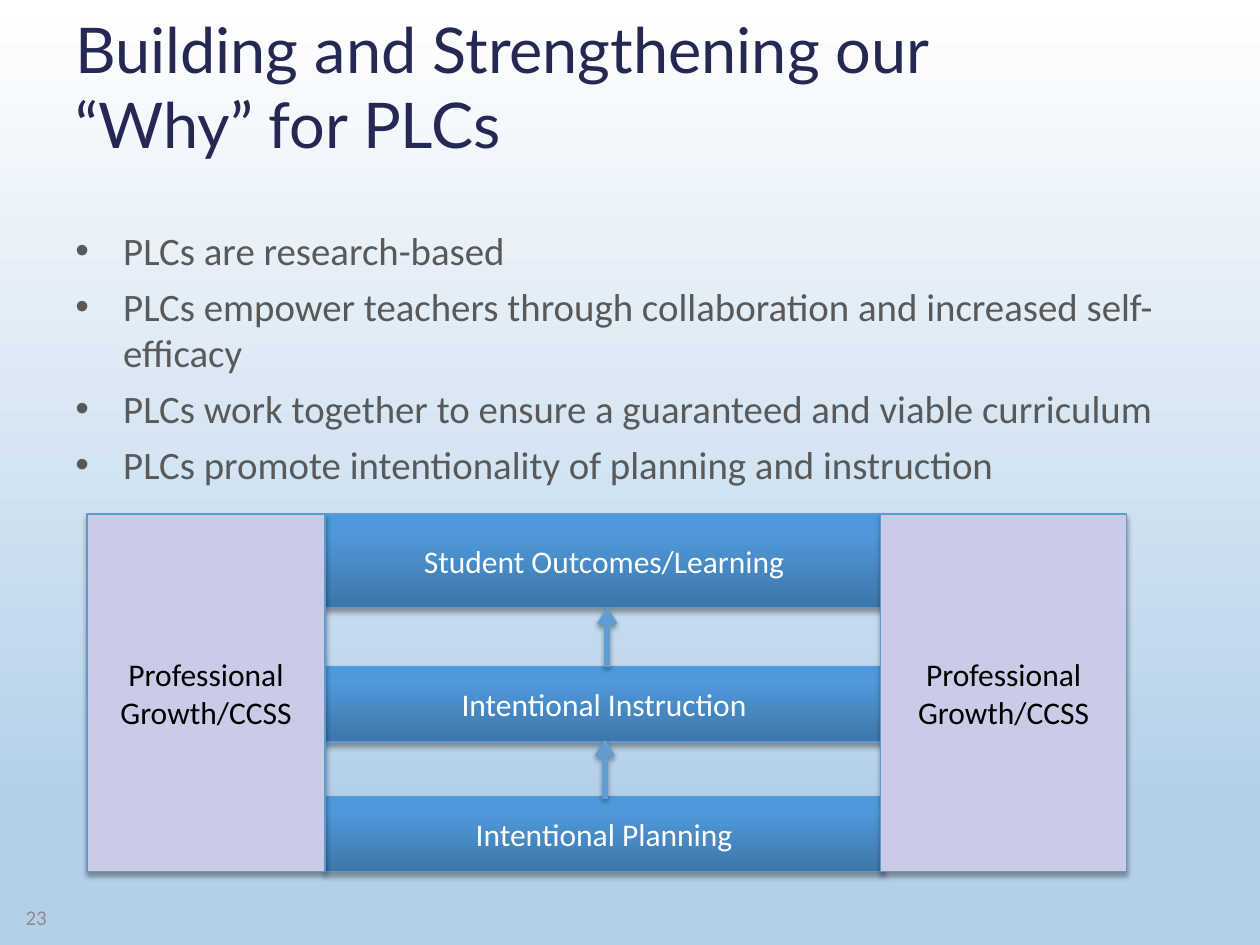
from dataclasses import dataclass
from typing import Any

from lxml.etree import SubElement
from pptx import Presentation
from pptx.dml.color import RGBColor
from pptx.enum.shapes import MSO_CONNECTOR, MSO_SHAPE
from pptx.enum.text import MSO_ANCHOR, PP_ALIGN
from pptx.oxml.ns import qn
from pptx.util import Inches, Pt

TITLE_COLOR, BODY_COLOR, NUMBER_COLOR = "242852", "595959", "8C8C8C"
BOX_LINE, ARROW_COLOR, PILLAR_FILL = "5D9ACF", "629DD1", "C9CBE7"
WHITE, BLACK = "FFFFFF", "000000"
BACKGROUND_STOPS = [(0, WHITE), (85, "B4D0E9")]
STEP_STOPS = [(0, "3D76A8"), (80, "4F99DB"), (100, "4C9ADE")]
DIAGRAM_TOP, DIAGRAM_HEIGHT = 4.08, 2.84
STEP_LEFT, STEP_WIDTH = 2.58, 4.43
BULLETS = [
    "PLCs are research-based",
    "PLCs empower teachers through collaboration and increased self-efficacy",
    "PLCs work together to ensure a guaranteed and viable curriculum",
    "PLCs promote intentionality of planning and instruction",
]


@dataclass
class Area:
    left: float
    top: float
    width: float
    height: float

    def lengths(self) -> list[Inches]:
        return [Inches(value) for value in (self.left, self.top, self.width, self.height)]


@dataclass
class Box:
    label: str
    area: Area
    text_color: str
    fill_color: str | None = None


@dataclass
class Arrow:
    x: float
    bottom: float
    top: float


STEPS = [
    Box(label, Area(STEP_LEFT, top, STEP_WIDTH, height), WHITE)
    for label, top, height in [
        ("Intentional Planning", 6.32, 0.6),
        ("Intentional Instruction", 5.29, 0.6),
        ("Student Outcomes/Learning", DIAGRAM_TOP, 0.74),
    ]
]
ARROWS = [Arrow(4.82, 5.29, 4.82), Arrow(4.8, 6.34, 5.87)]
PILLARS = [
    Box("Professional Growth/CCSS", Area(left, DIAGRAM_TOP, width, DIAGRAM_HEIGHT), BLACK, PILLAR_FILL)
    for left, width in [(6.99, 1.95), (0.69, 1.89)]
]


def color(value: str) -> RGBColor:
    return RGBColor.from_string(value)


def apply_format(target: Any, values: dict[str, Any]) -> None:
    for name, value in values.items():
        setattr(target, name, value)


def set_gradient(fill: Any, element: Any, stops: list[tuple[int, str]], angle: int) -> None:
    fill.gradient()
    fill.gradient_angle = angle
    stop_list = element.xpath(".//a:gsLst")[0]
    for stop in list(stop_list):
        stop_list.remove(stop)
    for position, value in stops:
        stop = SubElement(stop_list, qn("a:gs"), pos=str(position * 1000))
        SubElement(stop, qn("a:srgbClr"), val=value)


def add_shadow(effects: Any, opacity: int, distance: float) -> None:
    shadow = SubElement(
        effects, qn("a:outerShdw"), blurRad=str(Pt(3.1)), dist=str(Pt(distance)),
        dir="5400000", rotWithShape="0",
    )
    shadow_color = SubElement(shadow, qn("a:srgbClr"), val=BLACK)
    SubElement(shadow_color, qn("a:alpha"), val=str(opacity * 1000))


def write_text(shape: Any, lines: list[str], size: float, text_color: str, font_name: str = "Calibri",
               anchor: Any = MSO_ANCHOR.MIDDLE, alignment: Any = PP_ALIGN.LEFT) -> None:
    frame = shape.text_frame
    apply_format(frame, {"word_wrap": True, "vertical_anchor": anchor})
    for index, line in enumerate(lines):
        paragraph = frame.paragraphs[0] if index == 0 else frame.add_paragraph()
        paragraph.text = line
        paragraph.alignment = alignment
        for run in paragraph.runs:
            apply_format(run.font, {"name": font_name, "size": Pt(size)})
            run.font.color.rgb = color(text_color)


def add_bullets(slide: Any, lines: list[str], area: Area) -> None:
    shape = slide.shapes.add_textbox(*area.lengths())
    write_text(shape, lines, 22.2, BODY_COLOR, anchor=MSO_ANCHOR.TOP)
    indent = Inches(0.38)
    for paragraph in shape.text_frame.paragraphs:
        paragraph.space_before = Pt(5.2)
        properties = paragraph._p.get_or_add_pPr()
        properties.set("marL", str(indent))
        properties.set("indent", str(-indent))
        SubElement(properties, qn("a:buFont"), typeface="Arial")
        SubElement(properties, qn("a:buChar"), char="•")


def add_box(slide: Any, box: Box) -> None:
    shape = slide.shapes.add_shape(MSO_SHAPE.RECTANGLE, *box.area.lengths())
    if box.fill_color:
        shape.fill.solid()
        shape.fill.fore_color.rgb = color(box.fill_color)
    else:
        set_gradient(shape.fill, shape.element, STEP_STOPS, 90)
    shape.line.color.rgb = color(BOX_LINE)
    shape.line.width = Pt(0.75)
    shape.shadow.inherit = False
    add_shadow(shape.element.spPr.find(qn("a:effectLst")), 35, 1.8)
    write_text(shape, [box.label], 18, box.text_color, alignment=PP_ALIGN.CENTER)


def add_arrow(slide: Any, arrow: Arrow) -> None:
    connector = slide.shapes.add_connector(
        MSO_CONNECTOR.STRAIGHT, Inches(arrow.x), Inches(arrow.bottom), Inches(arrow.x), Inches(arrow.top)
    )
    connector.line.color.rgb = color(ARROW_COLOR)
    connector.line.width = Pt(3.25)
    properties = connector.element.spPr
    SubElement(properties.find(qn("a:ln")), qn("a:tailEnd"), type="arrow")
    add_shadow(SubElement(properties, qn("a:effectLst")), 38, 1.6)


def main() -> None:
    presentation = Presentation()
    apply_format(presentation, {"slide_width": Inches(10), "slide_height": Inches(7.5)})
    slide = presentation.slides.add_slide(presentation.slide_layouts[6])
    set_gradient(slide.background.fill, slide.element, BACKGROUND_STOPS, 270)

    title = slide.shapes.add_textbox(*Area(0.5, 0.3, 9, 1.03).lengths())
    write_text(title, ["Building and Strengthening our\v“Why” for PLCs"], 36, TITLE_COLOR,
               "Lato", MSO_ANCHOR.BOTTOM)
    add_bullets(slide, BULLETS, Area(0.5, 1.75, 9, 2.33))
    for step in STEPS:
        add_box(slide, step)
    for arrow in ARROWS:
        add_arrow(slide, arrow)
    for pillar in PILLARS:
        add_box(slide, pillar)
    number = slide.shapes.add_textbox(*Area(0.03, 7.08, 0.44, 0.4).lengths())
    write_text(number, ["23"], 12, NUMBER_COLOR, alignment=PP_ALIGN.RIGHT)
    presentation.save("out.pptx")


if __name__ == "__main__":
    main()
